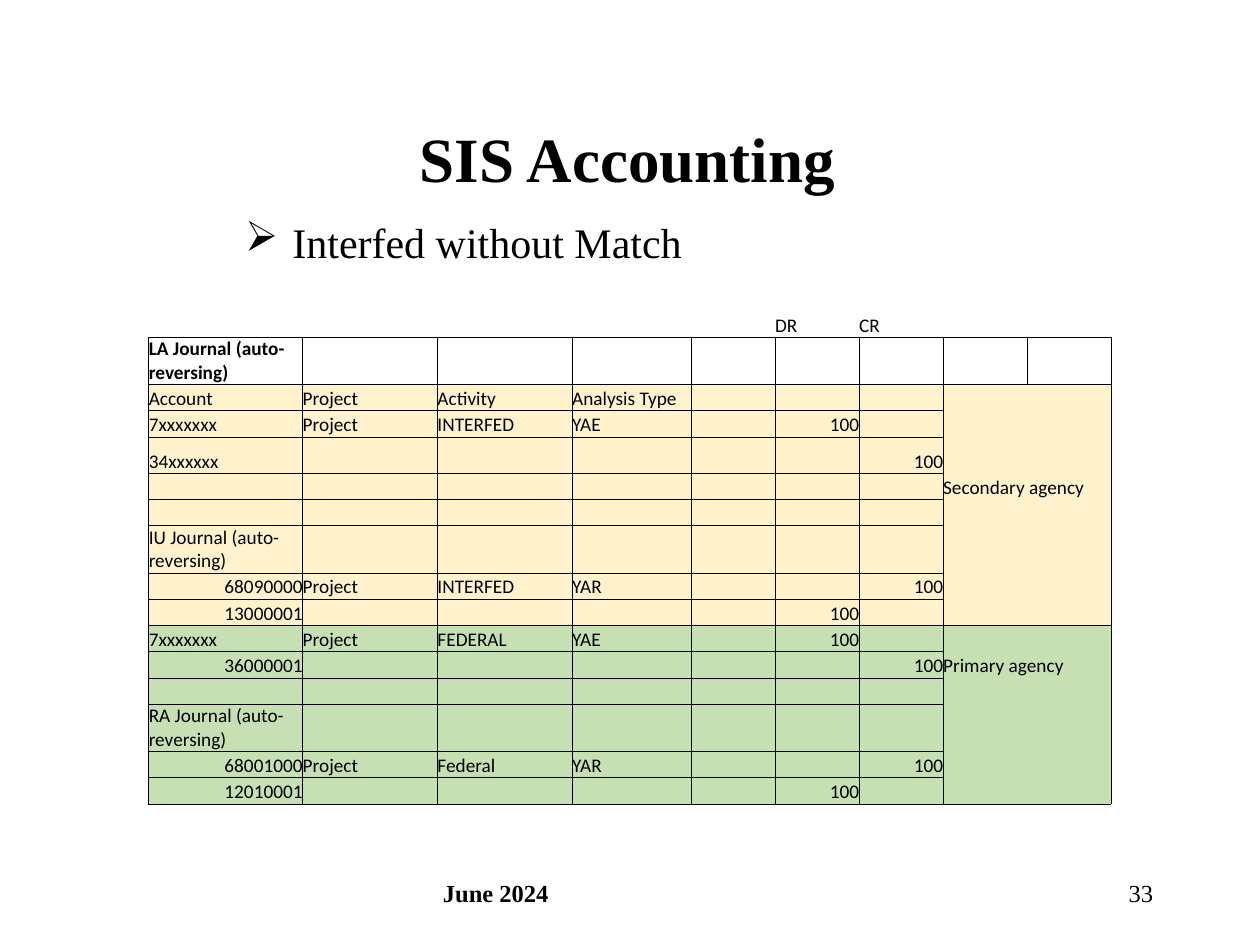
from lxml import etree
from pptx import Presentation
from pptx import util as u
from pptx.dml.color import RGBColor
from pptx.enum import text
from pptx.oxml.ns import qn

SERIF, SANS = "Times New Roman", "Calibri"
BLACK, CREAM, GREEN = "000000", "FFF2CC", "C6E0B4"
PLAIN_STYLE = "{2D5ABB26-0587-4C30-8999-92F81FD0307C}"
LEFT, CENTER, RIGHT = text.PP_ALIGN.LEFT, text.PP_ALIGN.CENTER, text.PP_ALIGN.RIGHT

COLUMN_WIDTHS = [88, 77, 77, 68] + [48] * 5
LINE_HEIGHT, TALL_HEIGHT, WRAPPED_HEIGHT = 15, 20.7, 27
AGENCY_COLUMN = 7
AGENCIES = [
    (2, 9, CREAM, 5, "Secondary agency"),
    (10, 15, GREEN, 11, "Primary agency"),
]
JOURNAL_ROWS = [
    ["", "", "", "", "", "DR", "CR"],
    ["LA Journal (auto-reversing)"],
    ["Account", "Project", "Activity", "Analysis Type"],
    ["7xxxxxxx", "Project", "INTERFED", "YAE", "", "100"],
    ["34xxxxxx", "", "", "", "", "", "100"],
    [],
    [],
    ["IU Journal (auto-reversing)"],
    ["68090000", "Project", "INTERFED", "YAR", "", "", "100"],
    ["13000001", "", "", "", "", "100"],
    ["7xxxxxxx", "Project", "FEDERAL", "YAE", "", "100"],
    ["36000001", "", "", "", "", "", "100"],
    [],
    ["RA Journal (auto-reversing)"],
    ["68001000", "Project", "Federal", "YAR", "", "", "100"],
    ["12010001", "", "", "", "", "100"],
]


def color(hex_code):
    return RGBColor.from_string(hex_code)


def add_span(para, words, size, font, bold=False):
    span = para.add_run()
    span.text = words
    span.font.size = u.Pt(size)
    span.font.name = font
    span.font.bold = bold
    span.font.color.rgb = color(BLACK)


def add_bullet(para, mark, indent):
    properties = para._p.get_or_add_pPr()
    properties.set("marL", str(u.Pt(indent)))
    properties.set("indent", str(-u.Pt(indent)))
    etree.SubElement(properties, qn("a:buChar"), char=mark)


def add_text(page, words, left, top, width, height, size,
             align=LEFT, bold=False, bullet=None):
    box = page.shapes.add_textbox(u.Pt(left), u.Pt(top), u.Pt(width), u.Pt(height))
    frame = box.text_frame
    frame.word_wrap = True
    frame.vertical_anchor = text.MSO_ANCHOR.MIDDLE
    para = frame.paragraphs[0]
    para.alignment = align
    if bullet:
        add_bullet(para, bullet, 27)
    add_span(para, words, size, SERIF, bold)


def set_borders(cell, sides):
    properties = cell._tc.get_or_add_tcPr()
    for position, side in enumerate("LRTB"):
        line = etree.Element(qn("a:ln" + side), w=str(u.Pt(0.5)))
        if side in sides:
            fill = etree.SubElement(line, qn("a:solidFill"))
            etree.SubElement(fill, qn("a:srgbClr"), val=BLACK)
        else:
            etree.SubElement(line, qn("a:noFill"))
        properties.insert(position, line)


def fill_cell(cell, words, fill, sides, bold=False):
    cell.margin_left = cell.margin_right = cell.margin_top = cell.margin_bottom = 0
    cell.vertical_anchor = text.MSO_ANCHOR.BOTTOM
    if fill:
        cell.fill.solid()
        cell.fill.fore_color.rgb = color(fill)
    else:
        cell.fill.background()
    set_borders(cell, sides)
    para = cell.text_frame.paragraphs[0]
    if words:
        para.alignment = RIGHT if words.isdigit() else LEFT
        add_span(para, words, 11, SANS, bold)
    else:
        etree.SubElement(para._p, qn("a:endParaRPr"), sz="1100")


def row_height(words):
    if words and "Journal" in words[0]:
        return WRAPPED_HEIGHT
    return TALL_HEIGHT if words and words[0].startswith("34") else LINE_HEIGHT


def add_agency(table, first, last, fill, label_row, label):
    for row in range(first, last + 1):
        ends = ("T" if row == first else "") + ("B" if row == last else "")
        labelled = row == label_row
        near, far = table.cell(row, AGENCY_COLUMN), table.cell(row, AGENCY_COLUMN + 1)
        fill_cell(near, label if labelled else "", fill, ends + ("LR" if labelled else "L"))
        fill_cell(far, "", fill, ends + "R")
        if labelled:
            near.merge(far)


def add_journal_table(page):
    heights = [row_height(words) for words in JOURNAL_ROWS]
    frame = page.shapes.add_table(
        len(heights), len(COLUMN_WIDTHS), u.Pt(85), u.Pt(177.8),
        u.Pt(sum(COLUMN_WIDTHS)), u.Pt(sum(heights)))
    table = frame.table
    table.first_row = table.horz_banding = False
    table._tbl.tblPr.find(qn("a:tableStyleId")).text = PLAIN_STYLE
    for column, width in zip(table.columns, COLUMN_WIDTHS):
        column.width = u.Pt(width)
    for row, height in zip(table.rows, heights):
        row.height = u.Pt(height)

    fills = {row: agency[2] for agency in AGENCIES
             for row in range(agency[0], agency[1] + 1)}
    for row, words in enumerate(JOURNAL_ROWS):
        columns = AGENCY_COLUMN if row in fills else len(COLUMN_WIDTHS)
        for column in range(columns):
            entry = words[column] if column < len(words) else ""
            fill_cell(table.cell(row, column), entry, fills.get(row),
                      "LRTB" if row else "B", bold=row == 1)
    for agency in AGENCIES:
        add_agency(table, *agency)


def main():
    deck = Presentation()
    deck.slide_width, deck.slide_height = u.Pt(720), u.Pt(540)
    page = deck.slides.add_slide(deck.slide_layouts[6])
    add_text(page, "SIS Accounting", -1.5, 60, 720, 60, 36, CENTER, bold=True)
    add_text(page, "June 2024", 246, 492, 228, 36, 14, bold=True)
    add_text(page, "33", 516, 492, 150, 36, 14, RIGHT)
    add_text(page, "Interfed without Match", 133, 108, 527, 60, 24, bullet="➢")
    add_journal_table(page)
    deck.save("out.pptx")


if __name__ == "__main__":
    main()
